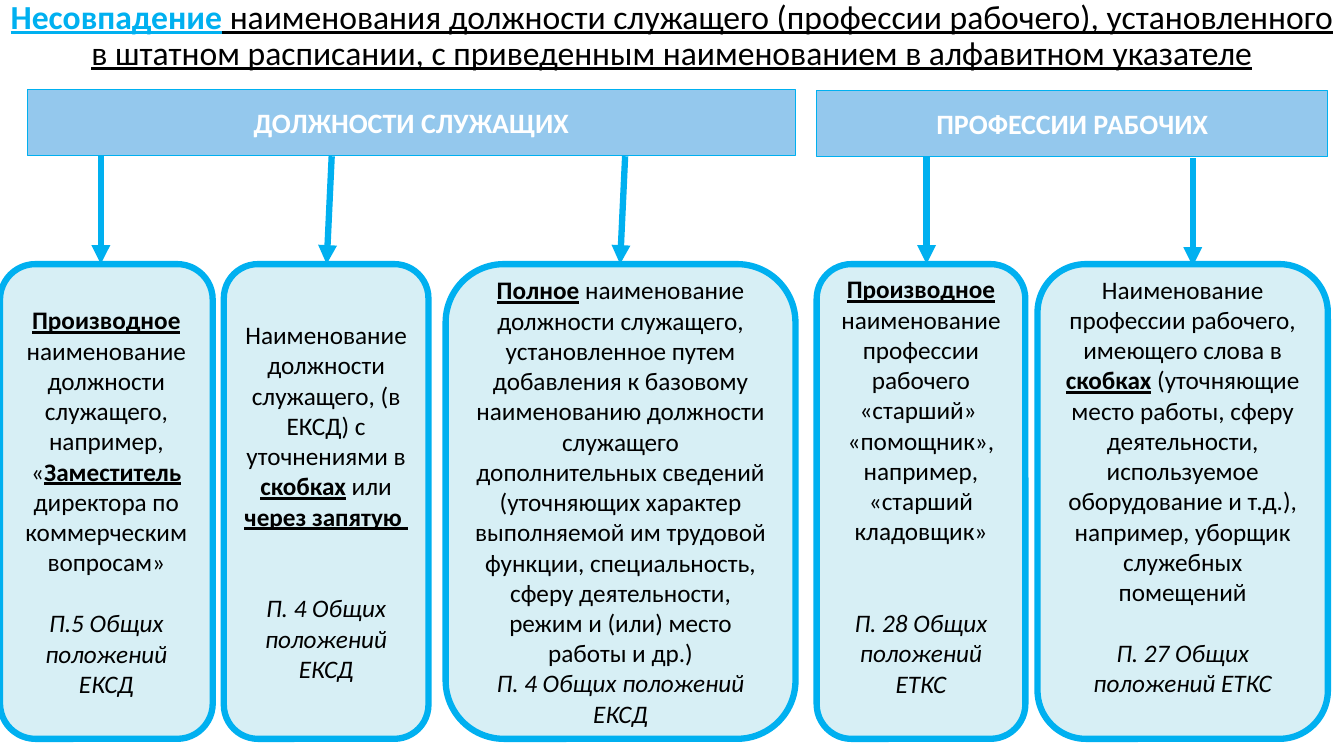
from lxml import etree
from pptx import Presentation, util as u
from pptx.dml.color import RGBColor
from pptx.enum import shapes, text
from pptx.oxml import ns

PX = 9144  # 100 px to the inch
LINE = 22  # height of one text line, in points
CYAN = RGBColor(0x00, 0xB0, 0xF0)
BLUE = RGBColor(0x94, 0xC8, 0xED)
PALE = RGBColor(0xD7, 0xEF, 0xF5)
BLACK = RGBColor(0, 0, 0)
WHITE = RGBColor(255, 255, 255)

TITLE = ("*Несовпадение* наименования должности служащего (профессии рабочего), "
         "установленного в штатном расписании, с приведенным наименованием "
         "в алфавитном указателе")

# Head: box and caption
HEADS = [
    ((27, 89, 762, 65), "ДОЛЖНОСТИ СЛУЖАЩИХ"),
    ((810, 90, 507, 65), "ПРОФЕССИИ РАБОЧИХ"),
]

# Card: left, width, paragraphs (*key words*), source, blank lines before and after it
CARDS = [
    (0, 211, ["*Производное* наименование должности служащего, например, "
              "«*Заместитель* директора по коммерческим вопросам»"],
     "П.5 Общих положений ЕКСД", 1, 0),
    (222, 203, ["Наименование должности служащего, (в ЕКСД) с уточнениями в "
                "*скобках* или *через запятую *"],
     "П. 4 Общих положений ЕКСД", 2, 0),
    (442, 347, ["*Полное* наименование должности служащего, установленное путем "
                "добавления к базовому наименованию должности служащего "
                "дополнительных сведений (уточняющих характер выполняемой им "
                "трудовой функции, специальность, сферу деятельности, режим и "
                "(или) место работы и др.)"],
     "П. 4 Общих положений ЕКСД", 0, 0),
    (810, 207, ["*Производное* наименование профессии рабочего «старший» ",
                "«помощник», например,", "«старший кладовщик»"],
     "П. 28 Общих положений ЕТКС", 2, 1),
    (1029, 288, ["Наименование профессии рабочего, имеющего слова в *скобках* "
                 "(уточняющие место работы, сферу деятельности, используемое "
                 "оборудование и т.д.), например, уборщик служебных помещений"],
     "П. 27 Общих положений ЕТКС", 1, 1),
]

# Arrow: start x, end x, top
ARROWS = [(100, 100, 155), (329, 324, 155), (620, 615, 155),
          (919, 919, 155), (1183, 1183, 157)]


def style(para, size, color):
    para.alignment = text.PP_ALIGN.CENTER
    para.font.name = "Calibri"
    para.font.size = u.Pt(size)
    para.font.color.rgb = color


def fill_runs(para, words):
    """Add runs; the parts between asterisks are bold and underlined."""
    for i, part in enumerate(words.split("*")):
        if part:
            run = para.add_run()
            run.text = part
            if i % 2:
                run.font.bold = run.font.underline = True


def add_box(slide, kind, box, color, width):
    shape = slide.shapes.add_shape(kind, *[n * PX for n in box])
    shape.shadow.inherit = False
    shape.fill.solid()
    shape.fill.fore_color.rgb = color
    shape.line.color.rgb = CYAN
    shape.line.width = u.Pt(width)
    shape.text_frame.word_wrap = True
    shape.text_frame.vertical_anchor = text.MSO_ANCHOR.MIDDLE
    return shape.text_frame


def add_title(slide, box):
    frame = slide.shapes.add_textbox(*[n * PX for n in box]).text_frame
    frame.word_wrap = True
    frame.vertical_anchor = text.MSO_ANCHOR.MIDDLE
    para = frame.paragraphs[0]
    style(para, 24, BLACK)
    para.line_spacing = 0.9
    para.font.underline = True
    fill_runs(para, TITLE)
    para.runs[0].font.color.rgb = CYAN


def add_head(slide, box, words):
    frame = add_box(slide, shapes.MSO_SHAPE.RECTANGLE, box, BLUE, 1)
    para = frame.paragraphs[0]
    para.text = words
    style(para, 20, WHITE)
    para.font.bold = True


def add_card(slide, box, body, source, before, after):
    frame = add_box(slide, shapes.MSO_SHAPE.ROUNDED_RECTANGLE, box, PALE, 4.5)
    frame.margin_bottom = 5 * PX + u.Pt(after * LINE)
    for i, words in enumerate(body + [source]):
        para = frame.add_paragraph() if i else frame.paragraphs[0]
        style(para, 18, BLACK)
        fill_runs(para, words)
    para.font.italic = True
    para.space_before = u.Pt(before * LINE)


def add_arrow(slide, start, end, top):
    arrow = slide.shapes.add_connector(
        shapes.MSO_CONNECTOR.STRAIGHT,
        start * PX, top * PX, end * PX, (top + 107) * PX)
    arrow.line.color.rgb = CYAN
    arrow.line.width = u.Pt(4.5)
    tail = etree.SubElement(arrow.line._get_or_add_ln(), ns.qn("a:tailEnd"))
    tail.set("type", "triangle")
    etree.SubElement(arrow._element.spPr, ns.qn("a:effectLst"))


def main():
    deck = Presentation()
    deck.slide_width, deck.slide_height = 1333 * PX, 750 * PX
    slide = deck.slides.add_slide(deck.slide_layouts[6])
    add_title(slide, (0, -18, 1333, 108))
    for left, width, *words in CARDS:
        add_card(slide, (left, 262, width, 471), *words)
    for box, words in HEADS:
        add_head(slide, box, words)
    for ends in ARROWS:
        add_arrow(slide, *ends)
    deck.save("out.pptx")


if __name__ == "__main__":
    main()
